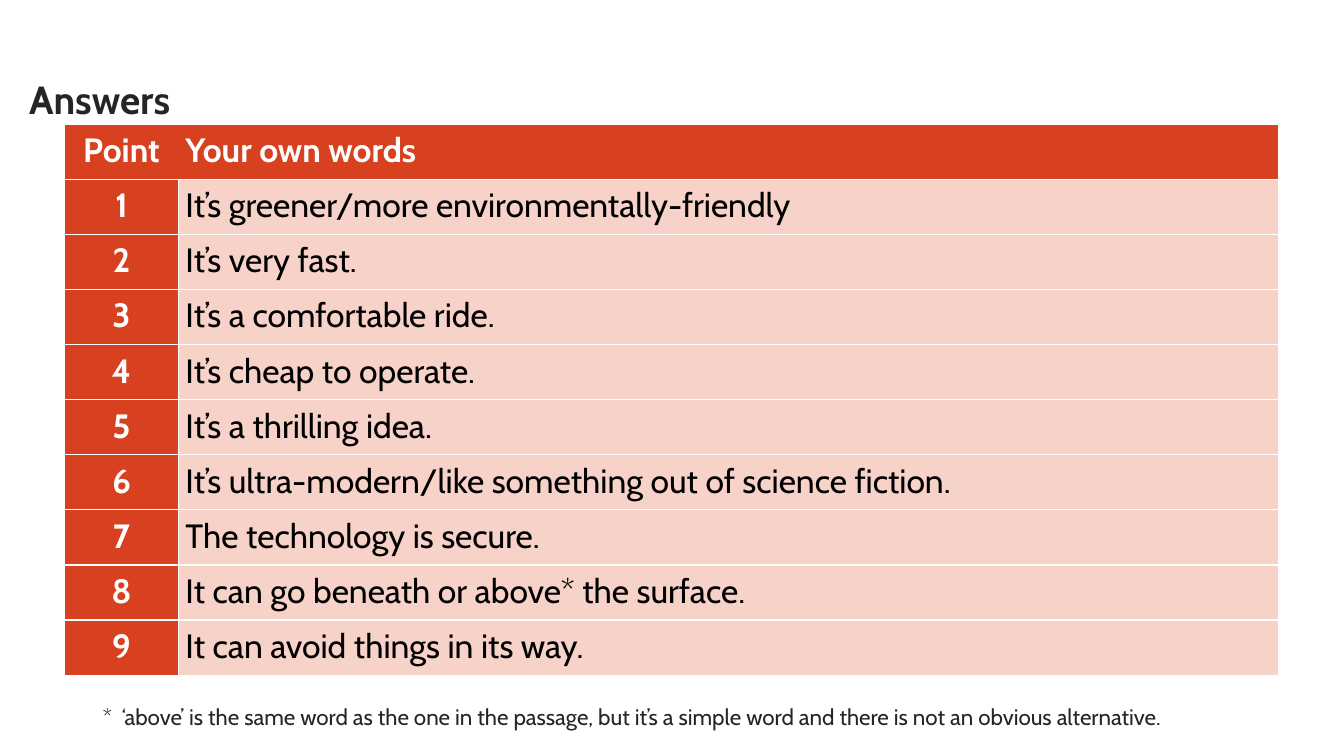
from lxml import etree
from pptx import Presentation
from pptx.dml.color import RGBColor
from pptx.enum.text import MSO_ANCHOR, PP_ALIGN
from pptx.oxml.ns import qn
from pptx.util import Inches, Pt

LEFT, CENTER = PP_ALIGN.LEFT, PP_ALIGN.CENTER
TOP, MIDDLE = MSO_ANCHOR.TOP, MSO_ANCHOR.MIDDLE

RED, PINK, WHITE, BLACK, INK = "D74120", "F7D2C9", "FFFFFF", "000000", "252525"

ANSWERS = [
    "It’s greener/more environmentally-friendly",
    "It’s very fast.",
    "It’s a comfortable ride.",
    "It’s cheap to operate.",
    "It’s a thrilling idea.",
    "It’s ultra-modern/like something out of science fiction.",
    "The technology is secure.",
    "It can go beneath or above* the surface.",
    "It can avoid things in its way.",
]
FOOTNOTE = (
    "*\t‘above’ is the same word as the one in the passage, "
    "but it’s a simple word and there is not an obvious alternative."
)


def color(value):
    return RGBColor.from_string(value)


def write(frame, text, font="Cabin", size=24, ink=BLACK, bold=False, align=LEFT,
          line=1.15, after=8, margin=0, hanging=0):
    paragraph = frame.paragraphs[0]
    paragraph.alignment = align
    paragraph.line_spacing = line
    paragraph.space_before = Pt(0)
    paragraph.space_after = Pt(after)
    if margin:
        properties = paragraph._p.get_or_add_pPr()
        properties.set("marL", str(Inches(margin)))
        properties.set("indent", str(-Inches(hanging)))
    run = paragraph.add_run()
    run.text = text
    run.font.name = font
    run.font.size = Pt(size)
    run.font.bold = bold
    run.font.color.rgb = color(ink)


def draw_border(cell, side, ink):
    border = etree.SubElement(cell._tc.get_or_add_tcPr(), qn(f"a:ln{side}"), w=str(Pt(1)))
    if ink is None:
        etree.SubElement(border, qn("a:noFill"))
    else:
        fill = etree.SubElement(border, qn("a:solidFill"))
        etree.SubElement(fill, qn("a:srgbClr"), val=ink)


class AnswerSlide:
    columns = rows = 100

    def __init__(self, presentation):
        self.column = presentation.slide_width / self.columns
        self.row = presentation.slide_height / self.rows
        self.slide = presentation.slides.add_slide(presentation.slide_layouts[6])

    def place(self, left, top, width, height):
        return (round(left * self.column), round(top * self.row),
                round(width * self.column), round(height * self.row))

    def text(self, box, text, anchor=TOP, **style):
        shape = self.slide.shapes.add_textbox(*self.place(*box))
        frame = shape.text_frame
        frame.word_wrap = True
        frame.vertical_anchor = anchor
        write(frame, text, **style)

    def cell(self, cell, text, fill, hidden_side=None, **style):
        cell.margin_left = cell.margin_right = Inches(0.07)
        cell.margin_top = cell.margin_bottom = 0
        for side in "LRTB":
            draw_border(cell, side, None if side == hidden_side else WHITE)
        cell.fill.solid()
        cell.fill.fore_color.rgb = color(fill)
        write(cell.text_frame, text, **style)

    def table(self, box, point_width, header, answers):
        left, top, width, height = self.place(*box)
        lines = [header, *enumerate(answers, 1)]
        table = self.slide.shapes.add_table(len(lines), 2, left, top, width, height).table
        table.columns[0].width = round(point_width * self.column)
        table.columns[1].width = width - table.columns[0].width
        for index, (point, answer) in enumerate(lines):
            is_header = index == 0
            table.rows[index].height = round(height / len(lines))
            self.cell(table.cell(index, 0), str(point), RED, "R" if is_header else None,
                      ink=WHITE, bold=True, align=CENTER)
            self.cell(table.cell(index, 1), answer, RED if is_header else PINK,
                      "L" if is_header else None,
                      ink=WHITE if is_header else BLACK, bold=is_header)


def main():
    presentation = Presentation()
    presentation.slide_width = Inches(13.33)
    presentation.slide_height = Inches(7.5)
    page = AnswerSlide(presentation)
    page.text((1.43, 10.67, 95.42, 5.6), "Answers", MIDDLE,
              size=28, ink=INK, bold=True, line=0.9, after=0)
    page.table((4.8, 16.4, 90.32, 72.93), 8.48, ("Point", "Your own words"), ANSWERS)
    page.text((3.15, 91.87, 89.5, 5.33), FOOTNOTE,
              size=16, ink=INK, margin=0.69, hanging=0.19)
    presentation.save("out.pptx")


if __name__ == "__main__":
    main()
